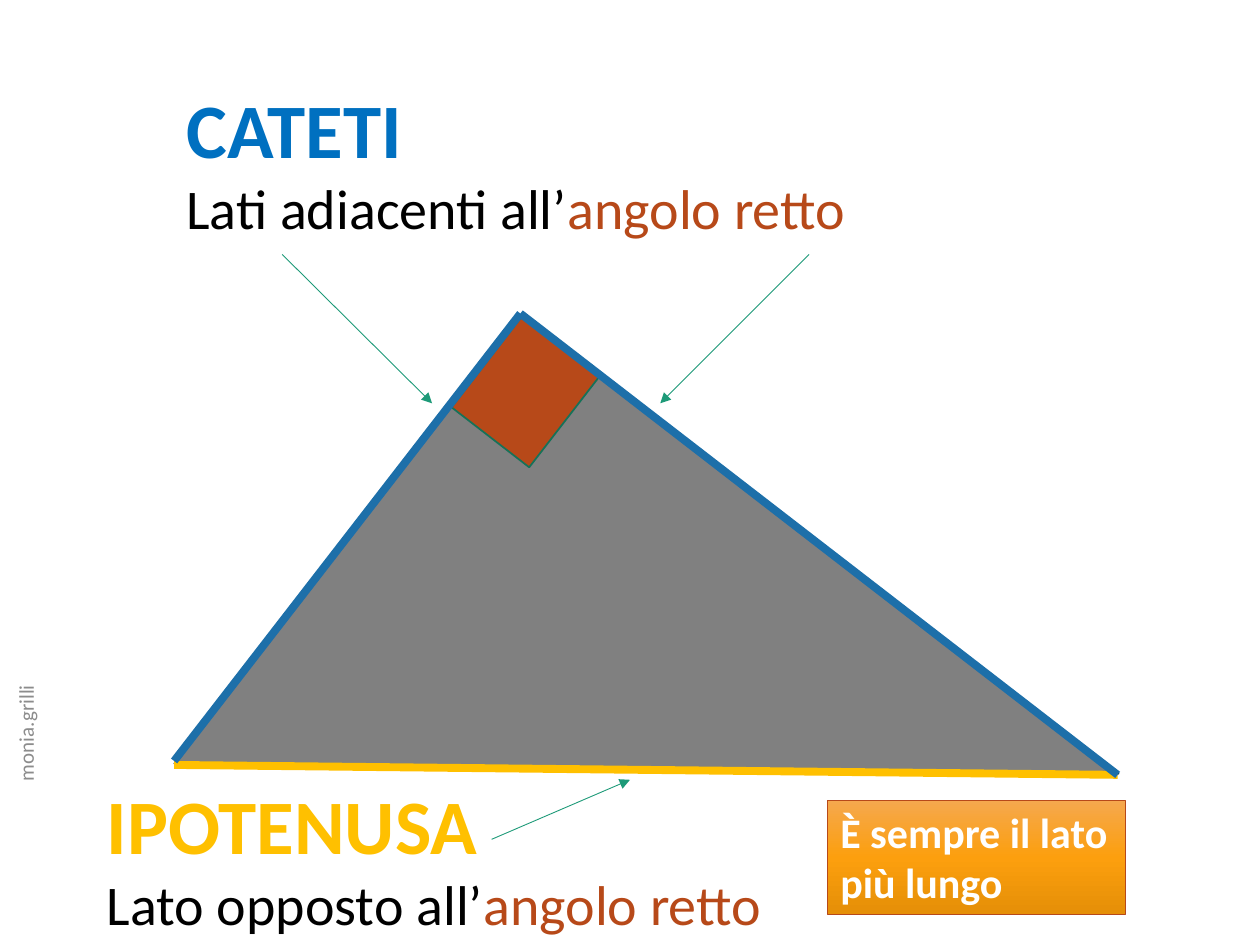
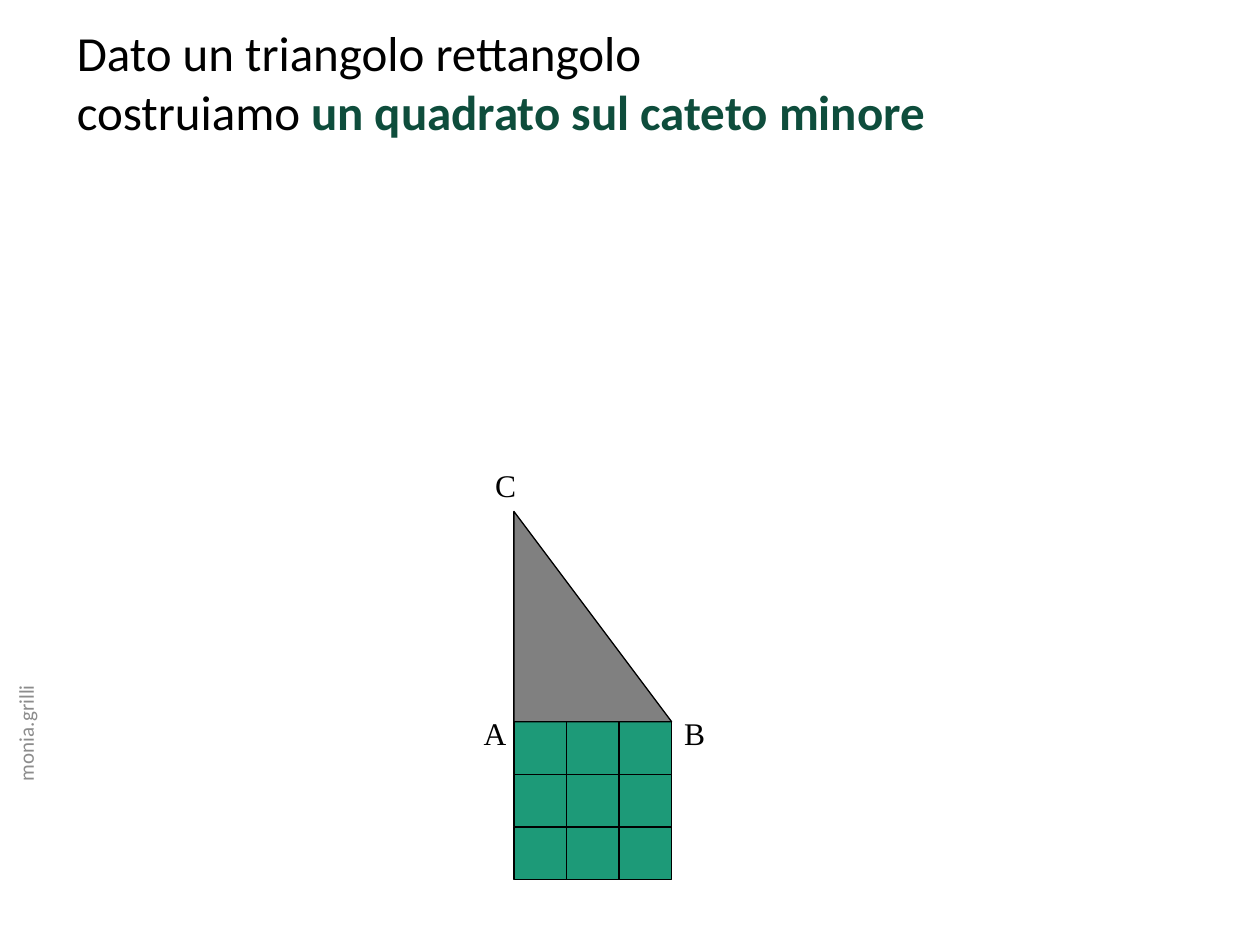
from copy import deepcopy
from dataclasses import dataclass

from lxml.etree import SubElement
from pptx import Presentation
from pptx.dml.color import RGBColor
from pptx.enum.shapes import MSO_CONNECTOR, MSO_SHAPE
from pptx.enum.text import MSO_ANCHOR, MSO_AUTO_SIZE, PP_ALIGN
from pptx.oxml.ns import qn
from pptx.util import Cm, Pt


@dataclass(frozen=True)
class Theme:
    # Colours
    text: str = "000000"
    white: str = "FFFFFF"
    muted: str = "8C8C8C"
    triangle: str = "808080"
    leg_title: str = "0070C0"
    leg: str = "1D6FA9"
    hypotenuse: str = "FFC000"
    right_angle: str = "B74919"
    right_angle_edge: str = "157259"
    green: str = "1D9A78"
    dark_green: str = "0E4D3C"
    note: tuple = ("F5A84E", "FC9F0E", "E58F07")
    # Fonts and sizes in points
    font: str = "Calibri"
    label_font: str = "Times New Roman"
    term: int = 44
    definition: int = 32
    heading: int = 28
    callout: int = 24
    label: int = 18
    footer: int = 12
    # Line widths in points
    thin: float = 0.5
    outline: float = 0.75
    side: float = 4.5


T = Theme()


def rgb(value):
    return RGBColor.from_string(value)


def write(tf, paragraphs, font=T.font):
    """Each paragraph is a list of (text, size, colour, bold) runs."""
    for i, runs in enumerate(paragraphs):
        p = tf.add_paragraph() if i else tf.paragraphs[0]
        p.alignment = PP_ALIGN.LEFT
        for text, size, colour, bold in runs:
            r = p.add_run()
            r.text = text
            r.font.name = font
            r.font.size = Pt(size)
            r.font.bold = bold
            r.font.color.rgb = rgb(colour)


def add_text(s, box, paragraphs, font=T.font, wrap=False):
    sp = s.shapes.add_textbox(*map(Cm, box))
    tf = sp.text_frame
    tf.word_wrap = wrap
    tf.auto_size = MSO_AUTO_SIZE.SHAPE_TO_FIT_TEXT
    write(tf, paragraphs, font)
    return sp


def add_figure(shapes, kind, box, fill, edge=T.text, width=T.outline, rotation=0):
    sp = shapes.add_shape(kind, *map(Cm, box))
    sp.shadow.inherit = False
    sp.rotation = rotation
    sp.fill.solid()
    sp.fill.fore_color.rgb = rgb(fill)
    sp.line.color.rgb = rgb(edge)
    sp.line.width = Pt(width)
    return sp


def add_line(s, start, end, colour, width, arrow=False):
    line = s.shapes.add_connector(MSO_CONNECTOR.STRAIGHT, *map(Cm, start + end))
    line.line.color.rgb = rgb(colour)
    line.line.width = Pt(width)
    if arrow:
        SubElement(line.line._get_or_add_ln(), qn("a:tailEnd"), type="triangle")
    SubElement(line._element.spPr, qn("a:effectLst"))


def add_definition(s, box, term, colour, lead):
    add_text(s, box, [
        [(term, T.term, colour, True)],
        [(lead, T.definition, T.text, False),
         ("angolo retto", T.definition, T.right_angle, False)],
    ])


def add_callout(s, box, text):
    sp = add_figure(s.shapes, MSO_SHAPE.RECTANGLE, box, T.note[0], T.right_angle, T.thin)
    sp.fill.gradient()
    sp.fill.gradient_angle = 270
    # A third stop is added to the default two
    stops = sp._element.spPr.find(qn("a:gradFill")).find(qn("a:gsLst"))
    stops.append(deepcopy(stops[-1]))
    for stop, colour, position in zip(sp.fill.gradient_stops, T.note, (0, 0.5, 1)):
        stop.color.rgb = rgb(colour)
        stop.position = position
    tf = sp.text_frame
    tf.word_wrap = True
    tf.vertical_anchor = MSO_ANCHOR.TOP
    write(tf, [[(text, T.callout, T.white, True)]])


def add_footer(s):
    sp = s.shapes.add_textbox(Cm(-3.78), Cm(14.27), Cm(8.59), Cm(1.02))
    sp.rotation = 270
    tf = sp.text_frame
    tf.word_wrap = True
    tf.vertical_anchor = MSO_ANCHOR.MIDDLE
    write(tf, [[("monia.grilli", T.footer, T.muted, False)]])
    tf.paragraphs[0].alignment = PP_ALIGN.CENTER


def add_square_grid(s, left, top, unit, count):
    for row in range(count):
        for col in range(count):
            cell = (left + col * unit, top + row * unit, unit, unit)
            add_figure(s.shapes, MSO_SHAPE.RECTANGLE, cell, T.green)


def build_sides(s):
    # Triangle with its right angle, turned together
    tilt = 127.7
    group = s.shapes.add_group_shape()
    add_figure(group.shapes, MSO_SHAPE.RIGHT_TRIANGLE, (7.29, 7.9, 11.48, 15.19),
               T.triangle, rotation=tilt)
    add_figure(group.shapes, MSO_SHAPE.RECTANGLE, (9.42, 6.88, 2.39, 1.98),
               T.right_angle, T.right_angle_edge, 1, tilt)

    # Definitions and their arrows
    add_definition(s, (3.51, 1.52, 13.89, 3.51), "CATETI", T.leg_title,
                   "Lati adiacenti all’")
    add_definition(s, (1.9, 15.54, 13.79, 3.51), "IPOTENUSA", T.hypotenuse,
                   "Lato opposto all’")
    for start, end in (((5.69, 5.13), (8.71, 8.13)),
                       ((16.31, 5.13), (13.31, 8.13)),
                       ((9.91, 16.92), (12.7, 15.72))):
        add_line(s, start, end, T.green, T.thin, arrow=True)

    # Highlighted sides
    apex, right = (10.49, 6.32), (22.53, 15.62)
    add_line(s, (3.51, 15.42), right, T.hypotenuse, T.side)
    add_line(s, (3.51, 15.34), apex, T.leg, T.side)
    add_line(s, right, apex, T.leg, T.side)

    add_callout(s, (16.69, 16.13, 5.99, 2.31), "È sempre il lato più lungo")


def build_square(s):
    # A 3-4 right triangle standing on the square of its shorter leg
    unit, left, base = 1.06, 10.36, 14.55
    add_square_grid(s, left, base, unit, 3)
    add_figure(s.shapes, MSO_SHAPE.RIGHT_TRIANGLE,
               (left, base - 4 * unit, 3 * unit, 4 * unit), T.triangle)

    # Vertex names
    for name, x, y in (("A", 9.5, 14.27), ("B", 13.54, 14.27), ("C", 9.73, 9.27)):
        add_text(s, (x, y, 0.95, 1.02), [[(name, T.label, T.text, False)]], T.label_font)

    # Heading
    add_text(s, (1.3, 0.33, 22.2, 2.64), [
        [("Dato un triangolo rettangolo", T.heading, T.text, False)],
        [("costruiamo ", T.heading, T.text, False),
         ("un quadrato sul cateto minore", T.heading, T.dark_green, True)],
    ], wrap=True)


def main():
    prs = Presentation()
    prs.slide_width, prs.slide_height = Cm(25.4), Cm(19.05)
    for build in (build_sides, build_square):
        s = prs.slides.add_slide(prs.slide_layouts[6])
        build(s)
        add_footer(s)
    prs.save("out.pptx")


if __name__ == "__main__":
    main()
